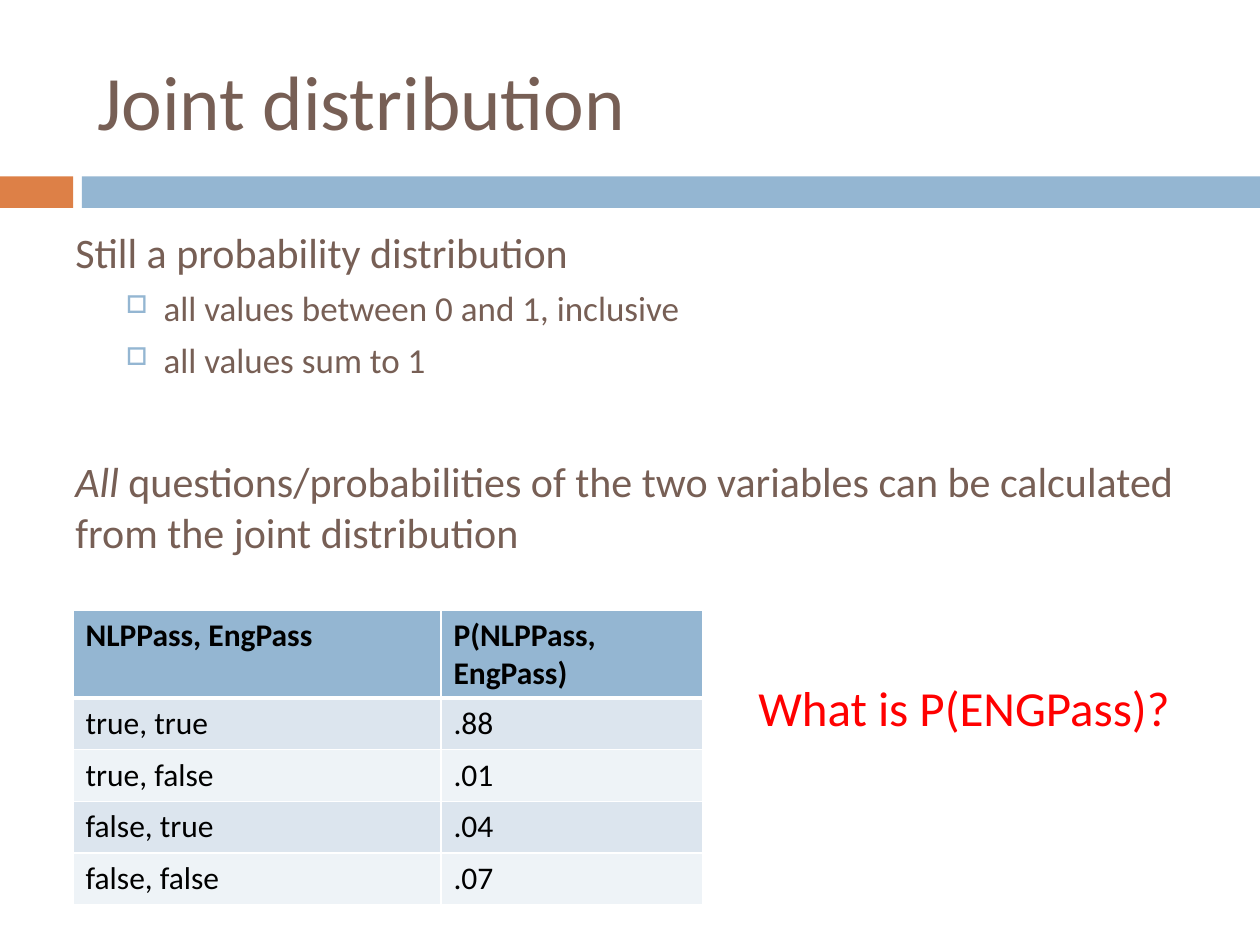
import dataclasses

import lxml.etree
import pptx
import pptx.dml.color
import pptx.enum.shapes
import pptx.enum.text
import pptx.oxml.ns
import pptx.util

Inches = pptx.util.Inches
Pt = pptx.util.Pt
RGBColor = pptx.dml.color.RGBColor
MSO_ANCHOR = pptx.enum.text.MSO_ANCHOR
qn = pptx.oxml.ns.qn


@dataclasses.dataclass(frozen=True)
class Theme:
    font: str = "Calibri"
    text: str = "775F55"
    orange: str = "DD8047"
    blue: str = "94B6D2"
    bands: tuple = ("DCE5EE", "EEF3F7")
    black: str = "000000"
    white: str = "FFFFFF"
    red: str = "FF0000"
    title_size: int = 44
    body_size: int = 24
    sub_size: int = 20
    table_size: int = 18
    question_size: int = 28


class SlideBuilder:
    def __init__(self, slide, theme):
        self.slide = slide
        self.theme = theme

    def run(self, p, text, size, color, **extra):
        r = p.add_run()
        r.text = text
        formats = {"name": self.theme.font, "size": Pt(size), **extra}
        for name, value in formats.items():
            setattr(r.font, name, value)
        r.font.color.rgb = RGBColor.from_string(color)

    def bar(self, left, top, width, height, color):
        box = [Inches(v) for v in (left, top, width, height)]
        sp = self.slide.shapes.add_shape(
            pptx.enum.shapes.MSO_SHAPE.RECTANGLE, *box)
        sp.shadow.inherit = False
        sp.fill.solid()
        sp.fill.fore_color.rgb = RGBColor.from_string(color)
        sp.line.fill.background()

    def title(self, text, left, top, width, height):
        sp = self.slide.shapes.title
        place = {"left": left, "top": top, "width": width, "height": height}
        for name, value in place.items():
            setattr(sp, name, Inches(value))
        tf = sp.text_frame
        tf.auto_size = pptx.enum.text.MSO_AUTO_SIZE.NONE
        tf.vertical_anchor = MSO_ANCHOR.MIDDLE
        p = tf.paragraphs[0]
        p.alignment = pptx.enum.text.PP_ALIGN.LEFT
        self.run(p, text, self.theme.title_size, self.theme.text)

    def text_box(self, left, top, width, height):
        box = [Inches(v) for v in (left, top, width, height)]
        tf = self.slide.shapes.add_textbox(*box).text_frame
        tf.word_wrap = True
        return tf

    def bullet(self, p):
        pPr = p._p.get_or_add_pPr()
        pPr.set("marL", str(Inches(0.7)))
        pPr.set("indent", str(Inches(-0.3)))
        color = lxml.etree.SubElement(pPr, qn("a:buClr"))
        lxml.etree.SubElement(color, qn("a:srgbClr"), val=self.theme.blue)
        lxml.etree.SubElement(pPr, qn("a:buSzPct"), val="70000")
        lxml.etree.SubElement(pPr, qn("a:buChar"), char="□")

    def body(self, paragraphs, *box):
        tf = self.text_box(*box)
        for i, (level, before, runs) in enumerate(paragraphs):
            p = tf.add_paragraph() if i else tf.paragraphs[0]
            p.level = level
            p.space_before = Pt(before)
            if level:
                self.bullet(p)
            size = self.theme.sub_size if level else self.theme.body_size
            for text, italic in runs:
                self.run(p, text, size, self.theme.text, italic=italic)

    def question(self, text, *box):
        p = self.text_box(*box).paragraphs[0]
        self.run(p, text, self.theme.question_size, self.theme.red)

    def borders(self, cell, widths):
        tcPr = cell._tc.get_or_add_tcPr()
        for i, (side, width) in enumerate(widths.items()):
            ln = lxml.etree.Element(qn(f"a:ln{side}"), w=str(Pt(width)))
            fill = lxml.etree.SubElement(ln, qn("a:solidFill"))
            lxml.etree.SubElement(fill, qn("a:srgbClr"), val=self.theme.white)
            tcPr.insert(i, ln)

    def table(self, rows, left, top, col_widths, row_heights):
        box = [Inches(v) for v in
               (left, top, sum(col_widths), sum(row_heights))]
        table = self.slide.shapes.add_table(
            len(rows), len(col_widths), *box).table
        for col, width in zip(table.columns, col_widths):
            col.width = Inches(width)
        for i, (row, height) in enumerate(zip(table.rows, row_heights)):
            row.height = Inches(height)
            header = i == 0
            color = self.theme.blue if header else self.theme.bands[(i - 1) % 2]
            # The rule under the header is heavier
            widths = {"L": 1, "R": 1, "T": 3 if i == 1 else 1,
                      "B": 3 if header else 1}
            for cell, text in zip(row.cells, rows[i]):
                cell.fill.solid()
                cell.fill.fore_color.rgb = RGBColor.from_string(color)
                self.borders(cell, widths)
                self.run(cell.text_frame.paragraphs[0], text,
                         self.theme.table_size, self.theme.black, bold=header)


def main():
    prs = pptx.Presentation()
    prs.slide_width, prs.slide_height = Inches(10), Inches(7.5)
    theme = Theme()
    s = SlideBuilder(prs.slides.add_slide(prs.slide_layouts[5]), theme)

    # Title and the two-colour band below it
    s.bar(0, 1.4, 0.58, 0.25, theme.orange)
    s.bar(0.65, 1.4, 9.35, 0.25, theme.blue)
    s.title("Joint distribution", 0.67, 0.25, 8.92, 1.08)

    # Properties: level, space before, runs with their italic flag
    s.body([
        (0, 7, [("Still a probability distribution", False)]),
        (1, 5.5, [("all values between 0 and 1, inclusive", False)]),
        (1, 5.5, [("all values sum to 1", False)]),
        (0, 43, [("All", True),
                 (" questions/probabilities of the two variables can be "
                  "calculated from the joint distribution", False)]),
    ], 0.5, 1.75, 9, 3.17)

    # Joint probabilities
    s.table([
        ("NLPPass, EngPass", "P(NLPPass, EngPass)"),
        ("true, true", ".88"),
        ("true, false", ".01"),
        ("false, true", ".04"),
        ("false, false", ".07"),
    ], 0.58, 4.84, (2.92, 2.08), [0.7] + [0.41] * 4)

    # Question beside the table
    s.question("What is P(ENGPass)?", 5.92, 5.33, 4.25, 0.57)

    prs.save("out.pptx")


if __name__ == "__main__":
    main()
